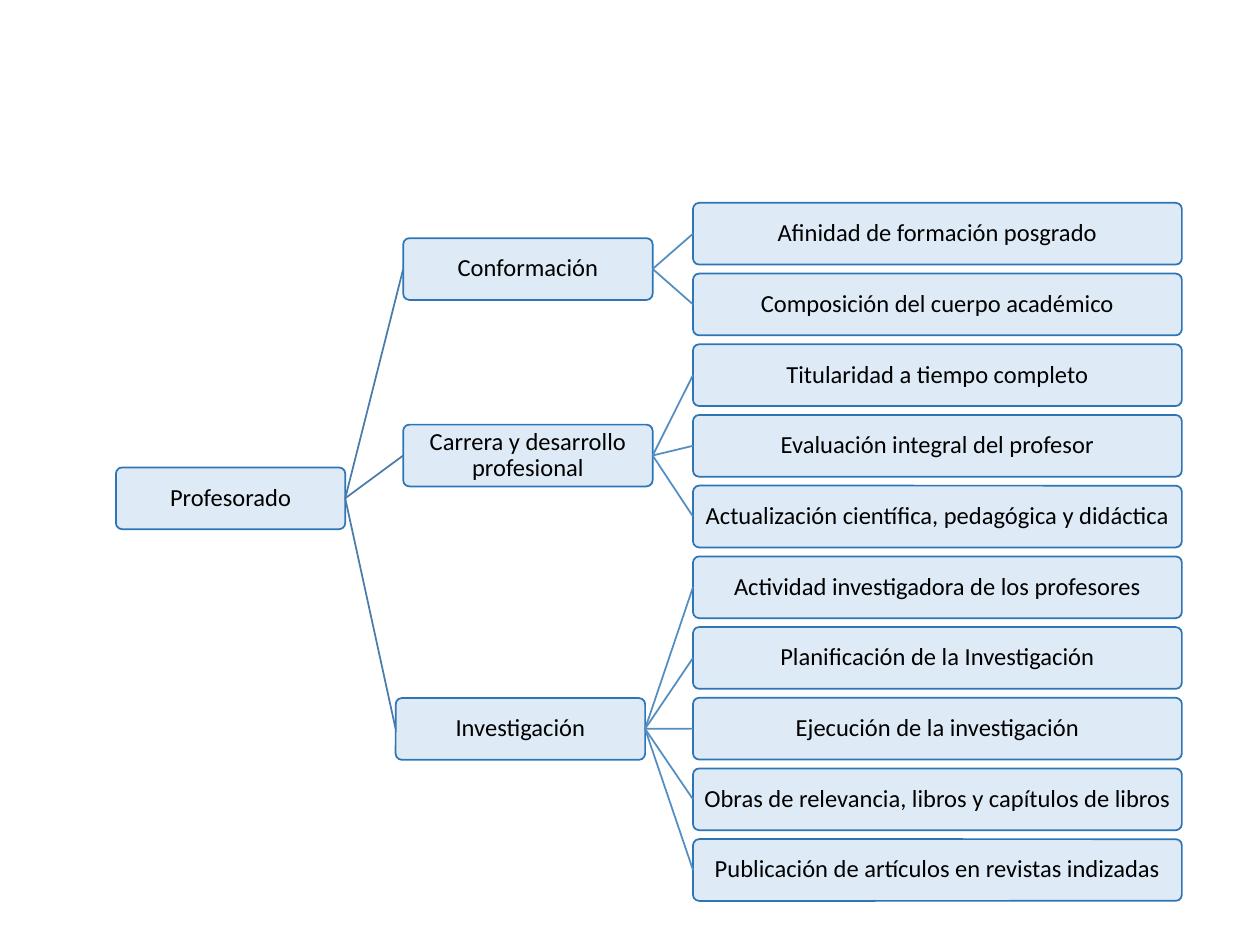
from lxml import etree
from pptx import Presentation
from pptx.dml.color import RGBColor
from pptx.enum.shapes import MSO_CONNECTOR, MSO_SHAPE
from pptx.enum.text import MSO_ANCHOR, PP_ALIGN
from pptx.oxml.ns import qn
from pptx.util import Inches, Pt

ROUNDED = MSO_SHAPE.ROUNDED_RECTANGLE
STRAIGHT = MSO_CONNECTOR.STRAIGHT
MIDDLE = MSO_ANCHOR.MIDDLE
CENTER = PP_ALIGN.CENTER
LEFT_SIDE, RIGHT_SIDE = 1, 3

COLORS = {
    "fill": "DEEBF7",
    "border": "2E75B6",
    "root_link": "497CAB",
    "leaf_link": "538DC1",
    "text": "000000",
}
BOX_HEIGHT = 0.49
LEAF_LEFT, LEAF_TOP, LEAF_WIDTH = 5.5, 1.61, 3.88
LEAF_PITCH = 5.05 / 9
BRANCH_WIDTH = 1.98

BRANCHES = [
    ("Conformación", 3.2, 1.89, [
        "Afinidad de formación posgrado",
        "Composición del cuerpo académico",
    ]),
    ("Carrera y desarrollo profesional", 3.2, 3.37, [
        "Titularidad a tiempo completo",
        "Evaluación integral del profesor",
        "Actualización científica, pedagógica y didáctica",
    ]),
    ("Investigación", 3.14, 5.54, [
        "Actividad investigadora de los profesores",
        "Planificación de la Investigación",
        "Ejecución de la investigación",
        "Obras de relevancia, libros y capítulos de libros",
        "Publicación de artículos en revistas indizadas",
    ]),
]

presentation = Presentation()
presentation.slide_width = Inches(10)
presentation.slide_height = Inches(7.5)
slide = presentation.slides.add_slide(presentation.slide_layouts[6])


def add_box(text, left, top, width):
    shape = slide.shapes.add_shape(
        ROUNDED, Inches(left), Inches(top), Inches(width), Inches(BOX_HEIGHT))
    shape.adjustments[0] = 0.1
    shape.shadow.inherit = False
    shape.fill.solid()
    shape.fill.fore_color.rgb = RGBColor.from_string(COLORS["fill"])
    shape.line.color.rgb = RGBColor.from_string(COLORS["border"])
    shape.line.width = Pt(1)
    frame = shape.text_frame
    frame.word_wrap = True
    frame.vertical_anchor = MIDDLE
    frame.margin_left = frame.margin_right = Inches(0.01)
    frame.margin_top = frame.margin_bottom = Inches(0.01)
    paragraph = frame.paragraphs[0]
    paragraph.alignment = CENTER
    paragraph.line_spacing = 0.9
    run = paragraph.add_run()
    run.text = text
    run.font.name = "Calibri"
    run.font.size = Pt(14)
    run.font.color.rgb = RGBColor.from_string(COLORS["text"])
    return shape


def link(parent, child, color):
    connector = slide.shapes.add_connector(STRAIGHT, 0, 0, 0, 0)
    connector.begin_connect(parent, RIGHT_SIDE)
    connector.end_connect(child, LEFT_SIDE)
    connector.line.color.rgb = RGBColor.from_string(COLORS[color])
    connector.line.width = Pt(1)
    etree.SubElement(connector.element.spPr, qn("a:effectLst"))


root = add_box("Profesorado", 0.92, 3.71, 1.82)
leaf_top = LEAF_TOP
for branch_text, branch_left, branch_top, leaves in BRANCHES:
    branch = add_box(branch_text, branch_left, branch_top, BRANCH_WIDTH)
    link(root, branch, "root_link")
    for leaf_text in leaves:
        leaf = add_box(leaf_text, LEAF_LEFT, leaf_top, LEAF_WIDTH)
        link(branch, leaf, "leaf_link")
        leaf_top += LEAF_PITCH

presentation.save("out.pptx")
